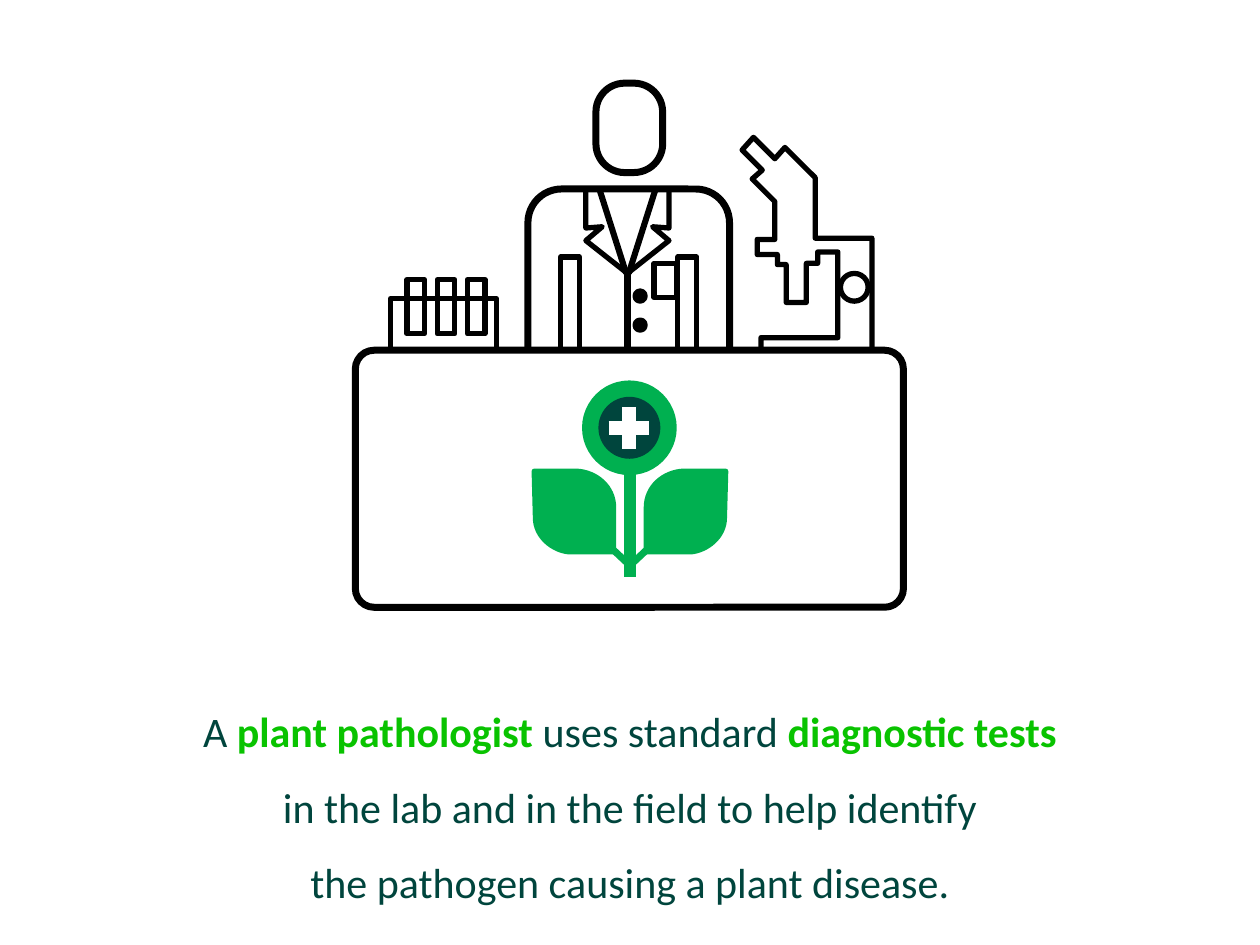
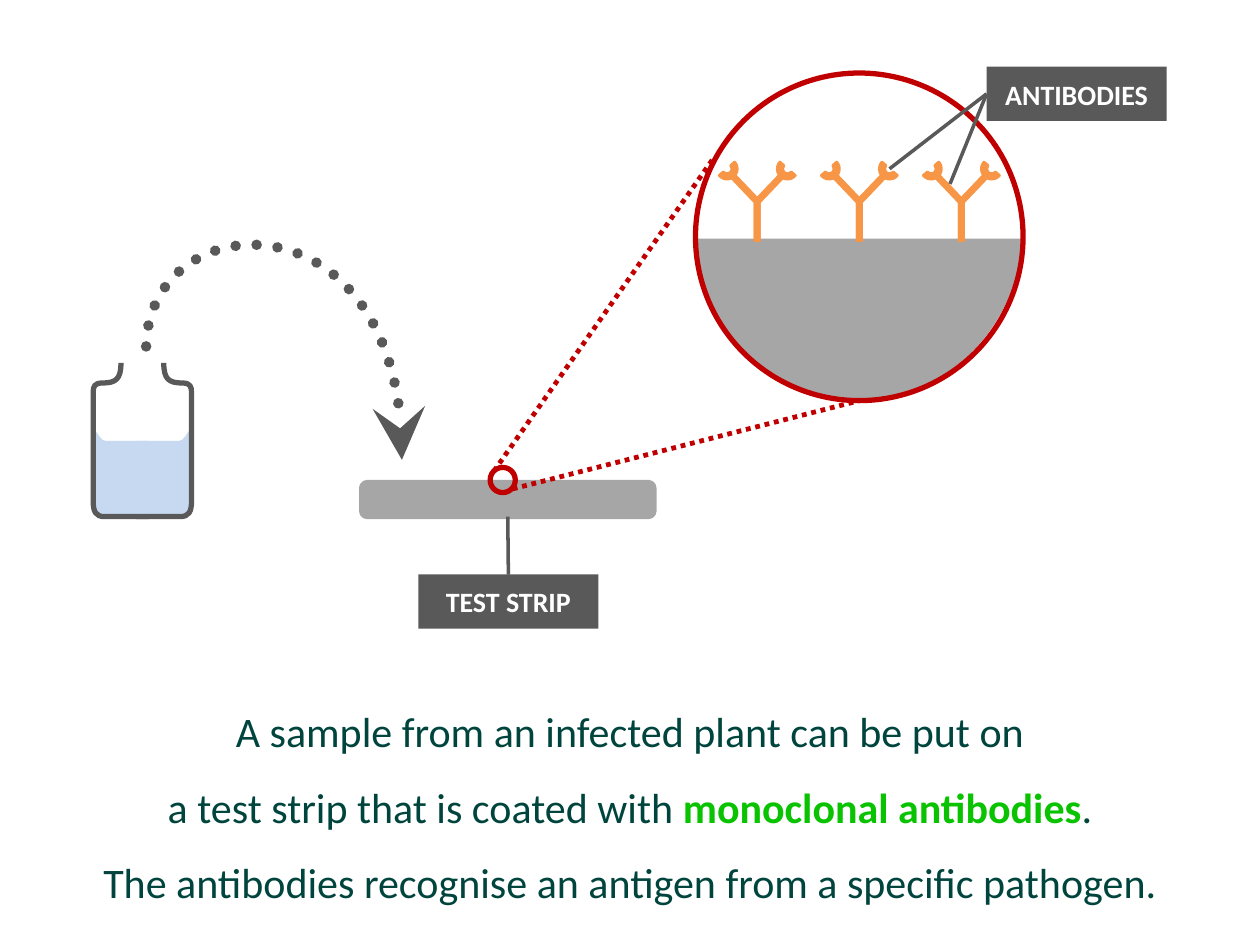
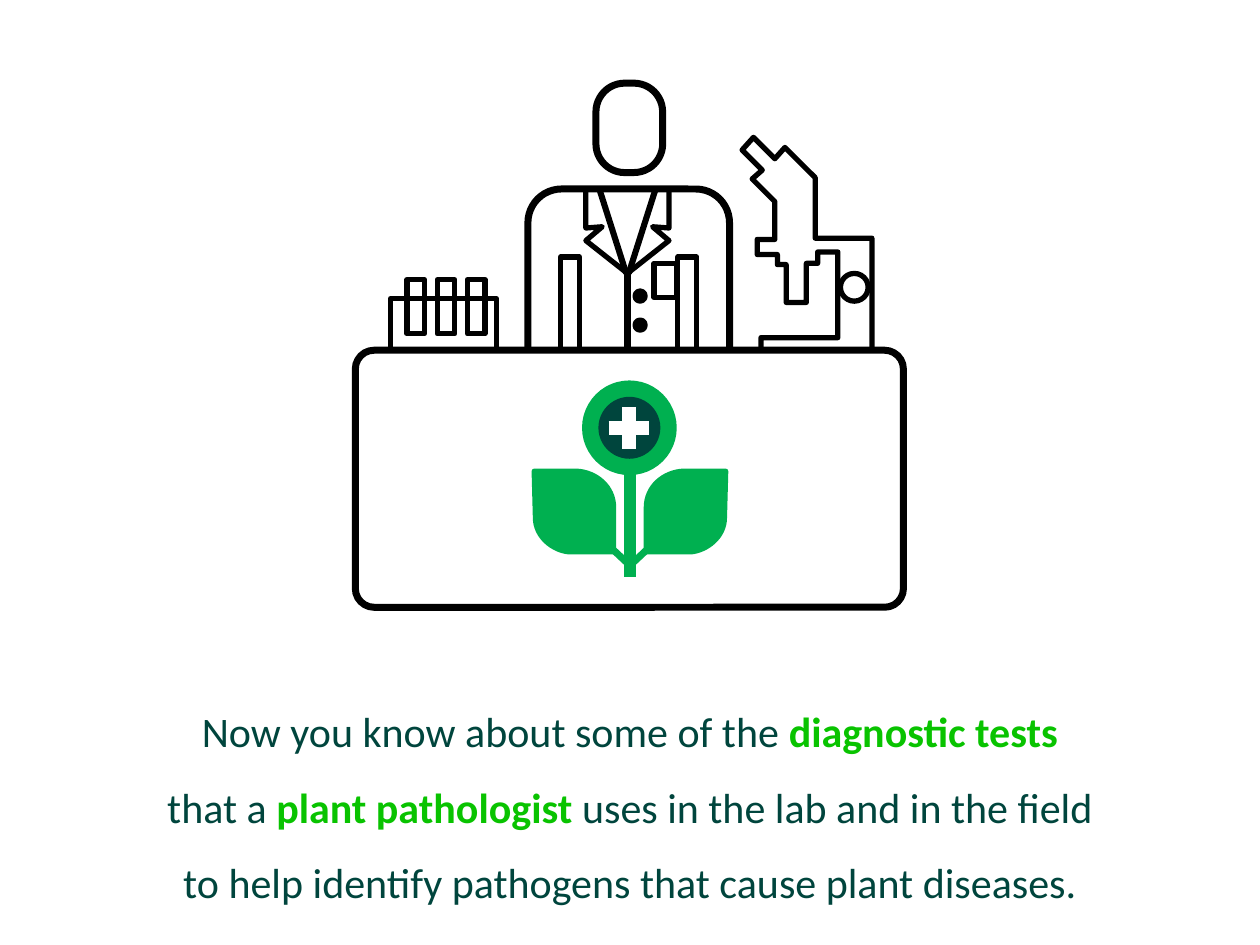
from dataclasses import dataclass

from lxml import etree
from pptx import Presentation
from pptx.dml.color import RGBColor
from pptx.enum.dml import MSO_LINE
from pptx.enum.shapes import MSO_CONNECTOR, MSO_SHAPE
from pptx.enum.text import MSO_ANCHOR, MSO_AUTO_SIZE, PP_ALIGN
from pptx.oxml.ns import qn
from pptx.util import Pt

PX = 9144
RECT = MSO_SHAPE.RECTANGLE
ROUND = MSO_SHAPE.ROUNDED_RECTANGLE
OVAL = MSO_SHAPE.OVAL
ARC = MSO_SHAPE.BLOCK_ARC
STRAIGHT = MSO_CONNECTOR.STRAIGHT
DOT = MSO_LINE.ROUND_DOT
CENTER = PP_ALIGN.CENTER
MIDDLE = MSO_ANCHOR.MIDDLE
GROW = MSO_AUTO_SIZE.SHAPE_TO_FIT_TEXT
SIDES = (-1, 1)


@dataclass(frozen=True)
class Theme:
    font: str = "Calibri"
    body: int = 24
    label: int = 16
    text: str = "00453D"
    key: str = "09C300"
    leaf: str = "00B050"
    black: str = "000000"
    white: str = "FFFFFF"
    strip: str = "A6A6A6"
    dark: str = "595959"
    zoom: str = "C00000"
    probe: str = "F79646"
    fluid: str = "C6D9F1"


T = Theme()


def px(n):
    return round(n * PX)


def rgb(color):
    return RGBColor.from_string(color)


def style(font, size, color, bold):
    font.name, font.size, font.bold = T.font, Pt(size), bold
    font.color.rgb = rgb(color)


def stroke(line, color, width, dash=None):
    if color is None:
        line.fill.background()
        return
    line.color.rgb = rgb(color)
    line.width = Pt(width)
    if dash:
        line.dash_style = dash


def paint(shape, fill, color, width, dash=None):
    shape.shadow.inherit = False
    if fill:
        shape.fill.solid()
        shape.fill.fore_color.rgb = rgb(fill)
    else:
        shape.fill.background()
    stroke(shape.line, color, width, dash)
    return shape


def bend(form, steps):
    lines = iter(list(form._element.iter(qn("a:lnTo"))))
    for step in steps:
        curve = next(lines)
        if len(step) == 6:
            curve.tag = qn("a:cubicBezTo")
            for _ in range(2):
                spare = next(lines)
                curve.append(spare[0])
                spare.getparent().remove(spare)


def mirror(points, mid, side):
    return [tuple(mid + side * n if i % 2 == 0 else n for i, n in enumerate(p))
            for p in points]


class Pen:
    def __init__(self, shapes, left, top):
        self.shapes, self.left, self.top = shapes, left, top

    def spot(self, x, y):
        return px(self.left + x), px(self.top + y)

    def box(self, kind, x, y, w, h, fill=None, color=T.black, width=3, adj=None):
        shape = self.shapes.add_shape(kind, *self.spot(x, y), px(w), px(h))
        if adj is not None:
            shape.adjustments[0] = adj
        return paint(shape, fill, color, width)

    def line(self, x, y, x2, y2, color=T.black, width=3.5, dash=None):
        link = self.shapes.add_connector(STRAIGHT, *self.spot(x, y), *self.spot(x2, y2))
        stroke(link.line, color, width, dash)
        etree.SubElement(link._element.spPr, qn("a:effectLst"))
        return link

    def draw(self, points, fill=None, color=T.black, width=3, dash=None, close=False):
        start, *steps = points
        spots = [self.spot(*s[i:i + 2]) for s in steps for i in range(0, len(s), 2)]
        form = self.shapes.build_freeform(*self.spot(*start))
        form.add_line_segments(spots, close=close)
        shape = form.convert_to_shape()
        bend(shape, steps)
        return paint(shape, fill, color, width, dash)


def person(shapes, left, top):
    pen = Pen(shapes, left, top)
    mid = 79
    pen.box(ROUND, 54, 0, 53, 71, width=4, adj=0.432)
    pen.box(ROUND, 0, 84, 160, 181, width=4, adj=0.167)
    for x in (26, 119):
        pen.box(RECT, x, 138, 15, 92)
    pen.box(RECT, 100, 143, 18, 27)
    lapel = [(33, 84), (33, 115), (20, 114), (33, 125), (0, 151)]
    for side in SIDES:
        pen.draw(mirror(lapel, mid, side))
    pen.line(mid, 151, mid, 217)
    for side in SIDES:
        pen.line(mid + 22 * side, 85, mid + side, 151)
    for y in (165, 188):
        pen.box(OVAL, 85, y, 8, 8, fill=T.black)


def rack(shapes, left, top):
    pen = Pen(shapes, left, top)
    for i in range(3):
        pen.box(RECT, 13 + 24 * i, 0, 14, 43)
    pen.box(RECT, 0, 15, 84, 60)


def scope(shapes, left, top):
    pen = Pen(shapes, left, top)
    pen.box(OVAL, 78, 108, 22, 22)
    pen.draw([(103, 169), (103, 80), (58, 80), (58, 32), (34, 8), (26, 17), (9, 0),
              (0, 10), (16, 26), (8, 33), (26, 51), (26, 81), (12, 81), (12, 93),
              (28, 93), (28, 101), (35, 101), (35, 131), (51, 131), (51, 100),
              (60, 100), (60, 91), (76, 91), (76, 159), (15, 159), (15, 169)])


def plant(shapes, left, top):
    pen = Pen(shapes, left, top)
    mid = 76
    pen.line(mid, 67, mid, 154, T.leaf, 7)
    for side in SIDES:
        pen.line(mid + 19 * side, 127, mid + 2 * side, 143, T.leaf, 4)
    pen.box(OVAL, 40, 0, 71, 71, T.leaf, T.leaf)
    pen.box(OVAL, 53, 13, 45, 45, T.text, T.text)
    pen.line(59, 36, 91, 36, T.white, 8)
    pen.line(75, 19, 75, 52, T.white, 8)
    leaf = [(76, 70), (42, 70), (27, 71, 13, 82, 13, 99), (13, 134), (48, 134),
            (61, 133, 75, 122, 75, 107), (76, 70)]
    for side in SIDES:
        pen.draw(mirror(leaf, mid, side), T.leaf, T.leaf, close=True)


def lab(slide, left, top, lines):
    shapes = slide.shapes.add_group_shape().shapes
    person(shapes, left + 137, top)
    rack(shapes, left + 28, top + 156)
    scope(shapes, left + 307, top + 43)
    Pen(shapes, left, top).box(ROUND, 0, 212, 435, 204, T.white, width=4, adj=0.073)
    plant(shapes, left + 142, top + 238)
    caption(slide, 32, 535, lines)


def bottle(slide, left, top):
    pen = Pen(slide.shapes.add_group_shape().shapes, left, top)
    mid = 39
    fluid = [(38, 53), (35, 56, 33, 62, 29, 62), (-5, 62), (-5, 122), (30, 122),
             (35, 121, 38, 117, 38, 114), (38, 53)]
    wall = [(17, 0), (17, 13, 21, 16, 32, 16), (38, 16, 39, 19, 39, 23), (39, 110),
            (39, 118, 37, 122, 30, 122), (-5, 122)]
    for side in SIDES:
        pen.draw(mirror(fluid, mid, side), T.fluid, None, close=True)
        pen.draw(mirror(wall, mid, side), color=T.dark)


def arrow(slide, left, top):
    pen = Pen(slide.shapes, left, top)
    arc = pen.draw([(0, 126), (2, 18, 205, 0, 203, 216)], color=T.dark, width=6, dash=DOT)
    ln = arc.line._get_or_add_ln()
    ln.set("cap", "rnd")
    etree.SubElement(ln, qn("a:tailEnd"), type="stealth", w="lg", len="lg")


def probe(slide, left, top):
    pen = Pen(slide.shapes.add_group_shape().shapes, left, top)
    mid = 32
    for side in SIDES:
        pen.draw([(mid + 20 * side, 13), (mid, 34), (mid, 66)], color=T.probe, width=4)
        tip = pen.box(ARC, mid + 24 * side - 8, 0, 16, 16, T.probe, T.probe, 1.75)
        tip.rotation = 180 + 40.8 * side


def label(slide, left, top, text):
    shape = Pen(slide.shapes, left, top).box(RECT, 0, 0, 143, 43, T.dark, None)
    frame = shape.text_frame
    frame.margin_left = frame.margin_right = px(8)
    frame.margin_top = frame.margin_bottom = px(8)
    frame.vertical_anchor = MIDDLE
    frame.auto_size = GROW
    para = frame.paragraphs[0]
    para.text, para.alignment = text, CENTER
    style(para.font, T.label, T.white, True)
    return shape


def test(slide, left, top, lines):
    caption(slide, 32, 535, lines)
    pen = Pen(slide.shapes, left, top)
    pen.draw([(477, 137), (738, 137), (713, 310, 486, 303, 478, 136)],
             T.strip, T.strip, 0.75)
    arrow(slide, left + 41, top + 96)
    strip = pen.box(ROUND, 212, 330, 232, 27, T.strip, T.strip)
    bottle(slide, left - 1, top + 235)
    pen.box(OVAL, 477, 5, 260, 260, color=T.zoom)
    pen.box(OVAL, 314, 318, 20, 20, color=T.zoom)
    pen.line(317, 321, 491, 73, T.zoom, 2.75, DOT)
    pen.line(332, 335, 607, 265, T.zoom, 2.75, DOT)
    for i in range(3):
        probe(slide, left + 494 + 81 * i, top + 73)
    tag = label(slide, left + 257, top + 403, "TEST STRIP")
    link = pen.line(328, 403, 328, 357, T.dark, 2)
    link.begin_connect(tag, 0)
    link.end_connect(strip, 2)
    tag = label(slide, left + 708, top, "ANTIBODIES")
    for x, y in ((679, 93), (631, 81)):
        pen.line(x, y, 708, 22, T.dark, 2).end_connect(tag, 1)


def caption(slide, left, top, lines):
    box = slide.shapes.add_textbox(px(left), px(top), px(936), px(192))
    frame = box.text_frame
    frame.word_wrap = True
    frame.auto_size = GROW
    for i, line in enumerate(lines):
        para = frame.add_paragraph() if i else frame.paragraphs[0]
        para.alignment, para.line_spacing = CENTER, 1.5
        for j, part in enumerate(line.split("*")):
            if part:
                run = para.add_run()
                run.text = part
                bold = j % 2 == 1
                style(run.font, T.body, T.key if bold else T.text, bold)


PAGES = (
    (lab, 282, 66, (
        "A *plant pathologist* uses standard *diagnostic tests*",
        "in the lab and in the field to help identify",
        "the pathogen causing a plant disease.")),
    (test, 75, 53, (
        "A sample from an infected plant can be put on",
        "a test strip that is coated with *monoclonal antibodies*.",
        "The antibodies recognise an antigen from a specific pathogen.")),
    (lab, 282, 66, (
        "Now you know about some of the *diagnostic tests*",
        "that a *plant pathologist *uses in the lab and in the field",
        "to help identify pathogens that cause plant diseases.")),
)


def main():
    deck = Presentation()
    deck.slide_width, deck.slide_height = px(1000), px(750)
    for scene, left, top, lines in PAGES:
        slide = deck.slides.add_slide(deck.slide_layouts[6])
        scene(slide, left, top, lines)
    deck.save("out.pptx")


if __name__ == "__main__":
    main()
